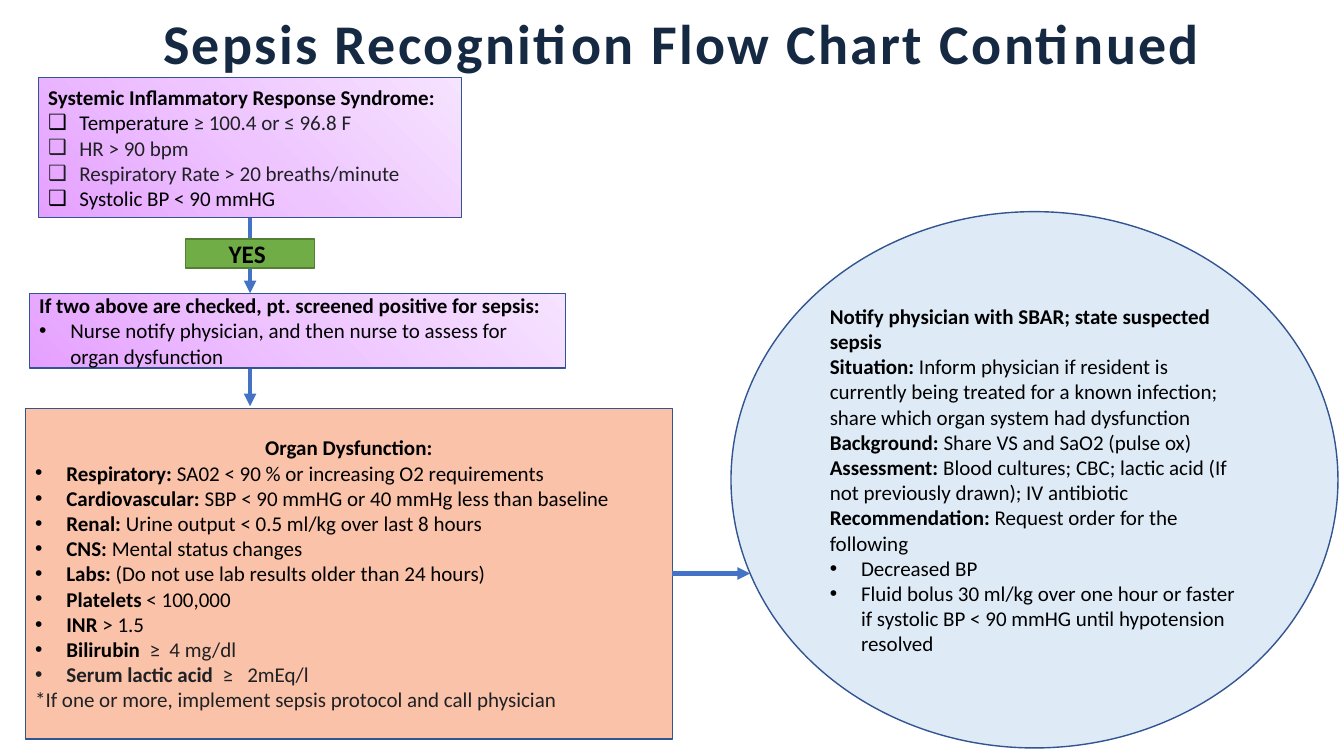
from lxml import etree
from pptx import Presentation
from pptx.dml.color import RGBColor
from pptx.enum import shapes, text
from pptx.oxml import parse_xml
from pptx.oxml.ns import nsdecls, qn
from pptx.util import Inches, Pt

COLORS = {
    "title": "162942", "black": "000000", "gray": "202124",
    "arrow": "4472C4", "outline": "325491", "green": "70AD47",
    "green_outline": "538035", "peach": "F9C2A9", "sky": "DEEBF7",
}
LILAC_STOPS = [(0, "E5A0FF"), (50, "EEC5FF"), (100, "F6E3FF")]
FLOW_X = 2.48
RECT = shapes.MSO_SHAPE.RECTANGLE
CENTER = text.PP_ALIGN.CENTER


def rgb(name):
    return RGBColor.from_string(COLORS[name])


def add_run(p, words, size=15, bold=False, color="black", spacing=None):
    r = p.add_run()
    r.text = words
    r.font.name = "Calibri"
    r.font.size = Pt(size)
    r.font.bold = bold
    r.font.color.rgb = rgb(color)
    if spacing is not None:
        r.font._element.set("spc", str(int(spacing * 100)))


def set_bullet(p, char):
    """Give the paragraph a hanging bullet."""
    pPr = p._p.get_or_add_pPr()
    pPr.set("marL", str(Inches(0.31)))
    pPr.set("indent", str(-Inches(0.31)))
    etree.SubElement(pPr, qn("a:buFont")).set("typeface", "Arial")
    etree.SubElement(pPr, qn("a:buChar")).set("char", char)


def add_paragraph(tf, *runs, bullet=None, align=text.PP_ALIGN.LEFT):
    """Append a paragraph; each run is (words, format dict)."""
    p = tf.paragraphs[0]
    if p.runs:
        p = tf.add_paragraph()
    p.alignment = align
    if bullet:
        set_bullet(p, bullet)
    for words, fmt in runs:
        add_run(p, words, **fmt)


def bold(words, **fmt):
    return words, {"bold": True, **fmt}


def plain(words, **fmt):
    return words, fmt


def fill_lilac(sp):
    """Radial gradient spreading from the lower left corner."""
    stops = "".join(
        f'<a:gs pos="{pos * 1000}"><a:srgbClr val="{color}"/></a:gs>'
        for pos, color in LILAC_STOPS)
    sp._element.spPr.find(qn("a:prstGeom")).addnext(parse_xml(
        f'<a:gradFill {nsdecls("a")} rotWithShape="1"><a:gsLst>{stops}</a:gsLst>'
        '<a:path path="circle"><a:fillToRect t="100000" r="100000"/></a:path>'
        '</a:gradFill>'))


def add_box(s, kind, left, top, width, height, fill=None, line="outline"):
    """Outlined shape, lilac unless a fill is named."""
    sp = s.shapes.add_shape(kind, *map(Inches, (left, top, width, height)))
    sp.shadow.inherit = False
    if fill:
        sp.fill.solid()
        sp.fill.fore_color.rgb = rgb(fill)
    else:
        fill_lilac(sp)
    sp.line.color.rgb = rgb(line)
    sp.line.width = Pt(1)
    sp.text_frame.word_wrap = True
    sp.text_frame.vertical_anchor = text.MSO_ANCHOR.MIDDLE
    return sp


def add_arrow(s, x1, y1, x2, y2, source=None, side=None):
    c = s.shapes.add_connector(
        shapes.MSO_CONNECTOR.STRAIGHT, *map(Inches, (x1, y1, x2, y2)))
    if source is not None:
        c.begin_connect(source, side)
    c.line.color.rgb = rgb("arrow")
    c.line.width = Pt(3)
    etree.SubElement(c.line._get_or_add_ln(), qn("a:tailEnd")).set("type", "triangle")
    etree.SubElement(c._element.spPr, qn("a:effectLst"))


def add_title(s):
    box = s.shapes.add_textbox(*map(Inches, (1.52, 0.08, 10.39, 0.67)))
    tf = box.text_frame
    tf.word_wrap = True
    tf.auto_size = text.MSO_AUTO_SIZE.SHAPE_TO_FIT_TEXT
    tf.margin_left = tf.margin_right = tf.margin_top = tf.margin_bottom = 0
    add_paragraph(tf, bold("Sepsis Recognition Flow Chart Continued", size=40,
                           color="title", spacing=1.7),
                  align=text.PP_ALIGN.RIGHT)


def add_screening(s):
    sirs = add_box(s, RECT, 0.38, 0.77, 4.2, 1.39)
    tf = sirs.text_frame
    add_paragraph(tf, bold("Systemic Inflammatory Response Syndrome:"))
    for runs in (
        [plain("Temperature "), plain("≥ 100.4 or ≤ 96.8 F", color="gray")],
        [plain("HR > 90 bpm", color="gray")],
        [plain("Respiratory Rate > 20 breaths/minute", color="gray")],
        [plain("Systolic BP < 90 mmHG")],
    ):
        add_paragraph(tf, *runs, bullet="❑")

    add_arrow(s, FLOW_X, 2.16, FLOW_X, 2.91, source=sirs, side=2)
    yes = add_box(s, RECT, 1.84, 2.37, 1.28, 0.29, "green", "green_outline")
    add_paragraph(yes.text_frame, bold("YES ", size=18), align=CENTER)

    tf = add_box(s, RECT, 0.29, 2.91, 5.32, 0.74).text_frame
    add_paragraph(tf, bold("If two above are checked, pt. screened positive for sepsis:"))
    add_paragraph(tf, plain("Nurse notify physician, and then nurse to assess for "
                            "organ dysfunction"), bullet="•")
    add_arrow(s, FLOW_X, 3.66, FLOW_X, 4.03)


def add_organ_dysfunction(s):
    organ = add_box(s, RECT, 0.25, 4.05, 6.42, 3.28, "peach")
    tf = organ.text_frame
    add_paragraph(tf, bold("Organ Dysfunction:"), align=CENTER)
    for label, finding, label_color, finding_color in (
        ("Respiratory: ", "SA02 < 90 % or increasing O2 requirements", "black", "black"),
        ("Cardiovascular:", " SBP < 90 mmHG or 40 mmHg less than baseline", "black", "black"),
        ("Renal: ", "Urine output < 0.5 ml/kg over last 8 hours", "black", "black"),
        ("CNS: ", "Mental status changes", "black", "black"),
        ("Labs: ", "(Do not use lab results older than 24 hours)", "black", "black"),
        ("Platelets ", "< 100,000", "black", "black"),
        ("INR ", "> 1.5", "black", "black"),
        ("Bilirubin  ", "≥  4 mg/dl", "black", "gray"),
        ("Serum lactic acid  ", "≥   2mEq/l", "gray", "gray"),
    ):
        add_paragraph(tf, bold(label, color=label_color),
                      plain(finding, color=finding_color), bullet="•")
    add_paragraph(tf, plain("*If one or more, implement sepsis protocol and call physician",
                            color="gray"))
    add_arrow(s, 6.67, 5.69, 7.44, 5.69, source=organ, side=3)


def add_sbar(s):
    tf = add_box(s, shapes.MSO_SHAPE.OVAL, 7.25, 2.1, 6.02, 5.32, "sky").text_frame
    add_paragraph(tf, bold("Notify physician with SBAR; state suspected sepsis"))
    for label, action in (
        ("Situation:", " Inform physician if resident is currently being treated for a "
                       "known infection; share which organ system had dysfunction"),
        ("Background:", " Share VS and SaO2 (pulse ox)"),
        ("Assessment:", " Blood cultures; CBC; lactic acid (If not previously drawn); "
                        "IV antibiotic"),
        ("Recommendation: ", "Request order for the following"),
    ):
        add_paragraph(tf, bold(label), plain(action))
    for order in (
        "Decreased BP",
        "Fluid bolus 30 ml/kg over one hour or faster if systolic BP < 90 mmHG "
        "until hypotension resolved",
    ):
        add_paragraph(tf, plain(order), bullet="•")


def main():
    prs = Presentation()
    prs.slide_width, prs.slide_height = Inches(13.33), Inches(7.5)
    s = prs.slides.add_slide(prs.slide_layouts[6])
    add_screening(s)
    add_title(s)
    add_sbar(s)
    add_organ_dysfunction(s)
    prs.save("out.pptx")


if __name__ == "__main__":
    main()
